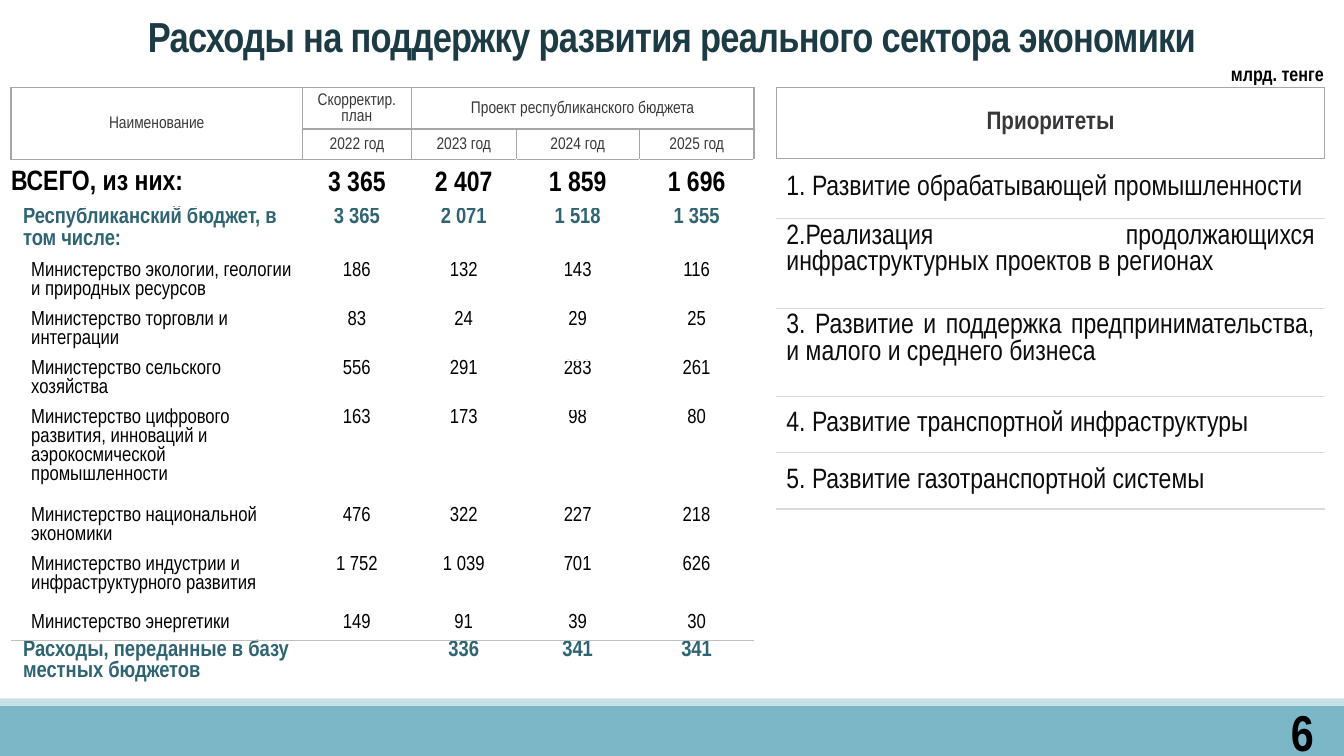
from lxml import etree
from pptx import Presentation
from pptx.dml.color import RGBColor
from pptx.enum.shapes import MSO_SHAPE
from pptx.enum.text import MSO_ANCHOR, PP_ALIGN
from pptx.oxml.ns import qn
from pptx.util import Inches, Pt

RECT = MSO_SHAPE.RECTANGLE
TOP, MIDDLE = MSO_ANCHOR.TOP, MSO_ANCHOR.MIDDLE
LEFT, CENTER, RIGHT, JUSTIFY = PP_ALIGN.LEFT, PP_ALIGN.CENTER, PP_ALIGN.RIGHT, PP_ALIGN.JUSTIFY

# Content
TITLE = "Расходы на поддержку развития реального сектора экономики"
UNIT = "млрд. тенге"
PAGE = "6"
HEADER = [
    ["Наименование", "Скорректир.\nплан", "Проект республиканского бюджета", "", ""],
    ["", "2022 год", "2023 год", "2024 год", "2025 год"],
]
# Row kind, name and amounts for 2022-2025
BUDGET = [
    ("total", "ВСЕГО, из них:", "3 365", "2 407", "1 859", "1 696"),
    ("group", "Республиканский бюджет, в том числе:", "3 365", "2 071", "1 518", "1 355"),
    ("item", "Министерство экологии, геологии и природных ресурсов", "186", "132", "143", "116"),
    ("item", "Министерство торговли и интеграции", "83", "24", "29", "25"),
    ("item", "Министерство сельского хозяйства", "556", "291", "283", "261"),
    ("item", "Министерство цифрового развития, инноваций и аэрокосмической промышленности",
     "163", "173", "98", "80"),
    ("item", "Министерство национальной экономики", "476", "322", "227", "218"),
    ("item", "Министерство индустрии и инфраструктурного развития", "1 752", "1 039", "701", "626"),
    ("last", "Министерство энергетики", "149", "91", "39", "30"),
    ("group", "Расходы, переданные в базу местных бюджетов", "", "336", "341", "341"),
]
# Text and vertical anchor
PRIORITIES = [
    ("Приоритеты", MIDDLE),
    ("1. Развитие обрабатывающей промышленности", MIDDLE),
    ("2.Реализация продолжающихся инфраструктурных проектов в регионах", TOP),
    ("3. Развитие и поддержка предпринимательства, и малого и среднего бизнеса", TOP),
    ("4. Развитие транспортной инфраструктуры", MIDDLE),
    ("5. Развитие газотранспортной системы", MIDDLE),
]

# Layout, in inches
SLIDE_W, SLIDE_H = 13.33, 7.5
TABLE_TOP = 0.87
BUDGET_COLS = [2.89, 1.08, 1.04, 1.22, 1.14]
BUDGET_ROWS = [0.4, 0.3, 0.48, 0.49, 0.49, 0.49, 0.42, 0.85, 0.49, 0.49, 0.35, 0.58]
PRIORITY_COLS = [5.44]
PRIORITY_ROWS = [0.7, 0.6, 0.89, 0.87, 0.56, 0.56]

THEME = {
    "font": "Arial Narrow",
    "band": "7CB7C8", "band_edge": "C8E1E8",
    "grid": "A6A6A6", "rule": "BFBFBF", "light_rule": "D9D9D9", "white": "FFFFFF",
    # Text styles: size, colour, bold
    "title": (30, "1C3B44", True),
    "unit": (14, "000000", True),
    "page": (36, "000000", True),
    "header": (12, "38383A", False),
    "total": (20, "000000", True),
    "group": (16, "2F6473", True),
    "item": (14.5, "000000", False),
    "last": (14.5, "000000", False),
    "priority_head": (18, "38383A", True),
    "priority": (20, "0D0D0D", False),
}
# Row kind: anchor, indent of the name, margin around amounts
ROW_LAYOUT = {
    "total": (MIDDLE, 0, 0.01),
    "group": (TOP, 0.12, 0),
    "item": (TOP, 0.2, 0),
    "last": (MIDDLE, 0.2, 0),
}
NO_STYLE = "{2D5ABB26-0587-4C30-8999-92F81FD0307C}"


def write(tf, text, style, align, line_spacing=None):
    size, color, bold = THEME[style]
    tf.text = text
    for p in tf.paragraphs:
        p.alignment = align
        if line_spacing:
            p.line_spacing = line_spacing
        for r in p.runs:
            r.font.name = THEME["font"]
            r.font.size = Pt(size)
            r.font.bold = bold
            r.font.color.rgb = RGBColor.from_string(color)


def add_band(s, y, h, color):
    sp = s.shapes.add_shape(RECT, 0, Inches(y), Inches(SLIDE_W), Inches(h))
    sp.shadow.inherit = False
    sp.fill.solid()
    sp.fill.fore_color.rgb = RGBColor.from_string(THEME[color])
    sp.line.fill.background()


def add_text(s, box, text, style, align, line_spacing=None):
    tf = s.shapes.add_textbox(*map(Inches, box)).text_frame
    tf.word_wrap = True
    tf.vertical_anchor = MIDDLE
    write(tf, text, style, align, line_spacing)
    return tf


def add_grid(s, x, cols, rows):
    table = s.shapes.add_table(len(rows), len(cols), Inches(x), Inches(TABLE_TOP),
                               Inches(sum(cols)), Inches(sum(rows))).table
    table.first_row = table.horz_banding = False
    table._tbl.tblPr.find(qn("a:tableStyleId")).text = NO_STYLE
    for col, w in zip(table.columns, cols):
        col.width = Inches(w)
    for row, h in zip(table.rows, rows):
        row.height = Inches(h)
    return table


def fill_cell(cell, text, style, align, anchor, borders, margins=None):
    tcPr = cell._tc.get_or_add_tcPr()
    for side in "LRTB":
        if side in borders:
            ln = etree.SubElement(tcPr, qn("a:ln" + side), w=str(Pt(1)))
            fill = etree.SubElement(ln, qn("a:solidFill"))
            etree.SubElement(fill, qn("a:srgbClr"), val=THEME[borders[side]])
    cell.fill.background()
    cell.vertical_anchor = anchor
    if margins:
        (cell.margin_left, cell.margin_top,
         cell.margin_right, cell.margin_bottom) = map(Inches, margins)
    if text:
        write(cell.text_frame, text, style, align)


def budget_borders(i, j):
    borders = {}
    if BUDGET[i][0] in ("total", "group", "item") and i < len(BUDGET) - 1:
        if j >= 2:
            borders["R"] = "white"
        if j >= 3:
            borders["L"] = "white"
        if i < 2 or j == 3:
            borders["B"] = "white"
        if i in (1, 2) or j == 3:
            borders["T"] = "white"
    if i == 0:
        borders["T"] = "grid"
    if BUDGET[i][0] == "last":
        borders["B"] = "rule"
    elif i and BUDGET[i - 1][0] == "last":
        borders["T"] = "rule"
    return borders


def add_budget(s):
    table = add_grid(s, 0.11, BUDGET_COLS, BUDGET_ROWS)
    for i, texts in enumerate(HEADER):
        for j, text in enumerate(texts):
            fill_cell(table.cell(i, j), text, "header", CENTER, MIDDLE,
                      dict.fromkeys("LRTB", "grid"), (0.01, 0.01, 0.01, 0))
    table.cell(0, 0).merge(table.cell(1, 0))
    table.cell(0, 2).merge(table.cell(0, 4))
    for i, (kind, *texts) in enumerate(BUDGET):
        anchor, indent, pad = ROW_LAYOUT[kind]
        for j, text in enumerate(texts):
            margins = (pad, pad, pad, 0) if j else (indent, 0, 0, 0)
            fill_cell(table.cell(i + len(HEADER), j), text, kind, CENTER if j else LEFT,
                      anchor, budget_borders(i, j), margins)


def add_priorities(s):
    table = add_grid(s, 7.7, PRIORITY_COLS, PRIORITY_ROWS)
    for i, (text, anchor) in enumerate(PRIORITIES):
        if i == 0:
            style, align, borders = "priority_head", CENTER, dict.fromkeys("LRTB", "grid")
        else:
            style, align = "priority", JUSTIFY
            borders = {"T": "grid" if i == 1 else "light_rule", "B": "light_rule"}
        fill_cell(table.cell(i, 0), text, style, align, anchor, borders)


def main():
    prs = Presentation()
    prs.slide_width, prs.slide_height = Inches(SLIDE_W), Inches(SLIDE_H)
    s = prs.slides.add_slide(prs.slide_layouts[6])

    # Footer bands and page number
    add_band(s, 7, 0.5, "band")
    add_band(s, 6.93, 0.07, "band_edge")
    add_text(s, (11.7, 7.06, 1.43, 0.4), PAGE, "page", RIGHT)

    # Title with tightened letters
    tf = add_text(s, (0, 0.02, SLIDE_W, 0.61), TITLE, "title", CENTER, 1.1)
    tf.paragraphs[0].runs[0]._r.get_or_add_rPr().set("spc", "-50")

    # Tables and unit of measure
    add_priorities(s)
    add_budget(s)
    add_text(s, (12.03, 0.48, 1.2, 0.48), UNIT, "unit", RIGHT, 1.1)

    prs.save("out.pptx")


if __name__ == "__main__":
    main()
